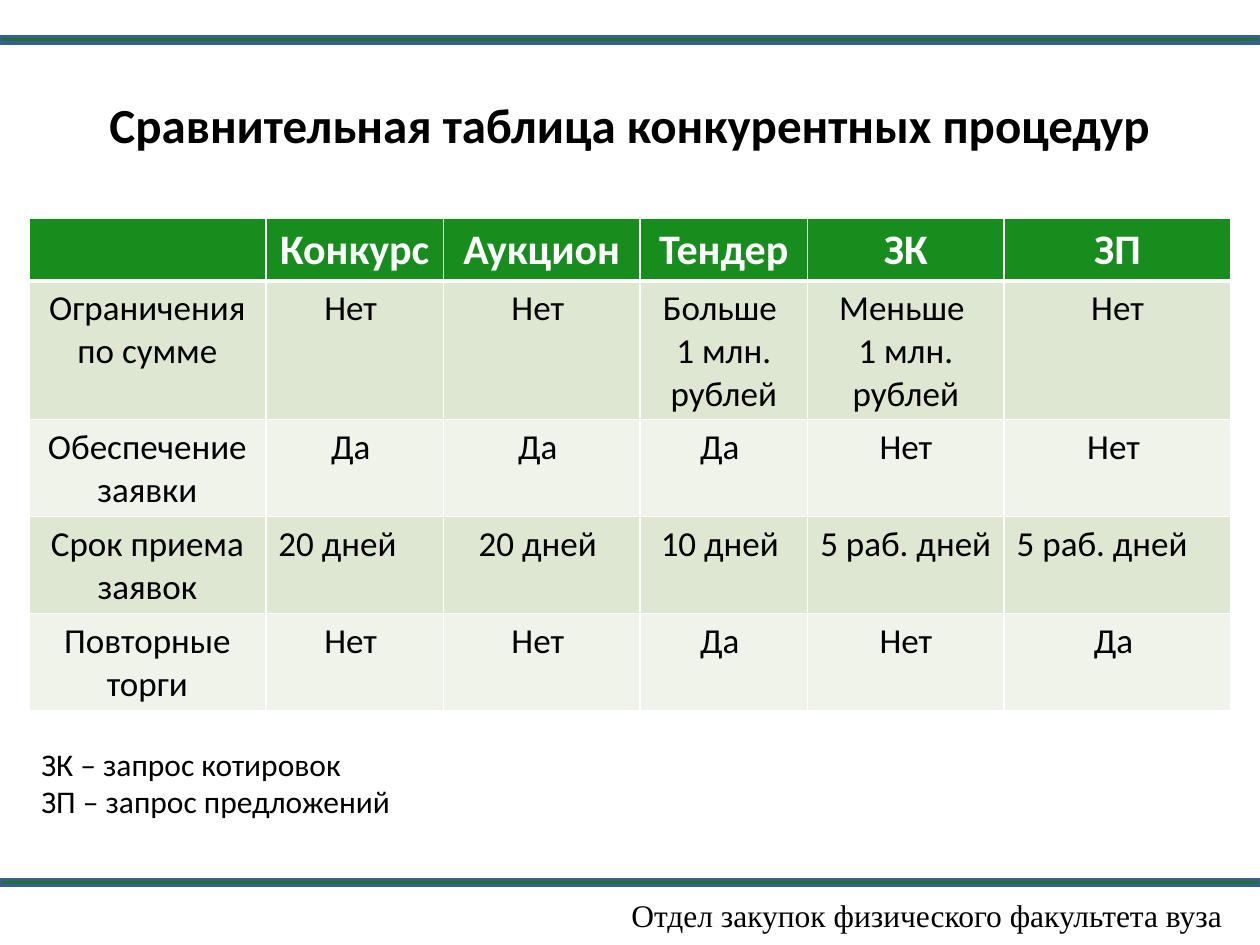
import pptx
import pptx.dml.color
import pptx.enum.shapes
import pptx.enum.text
import pptx.oxml
import pptx.oxml.ns
import pptx.util

Inches = pptx.util.Inches
Pt = pptx.util.Pt
RGBColor = pptx.dml.color.RGBColor
ALIGN = pptx.enum.text.PP_ALIGN

BLACK = RGBColor(0x00, 0x00, 0x00)
WHITE = RGBColor(0xFF, 0xFF, 0xFF)
BAR_GREEN = RGBColor(0x1B, 0x73, 0x38)
BAR_BLUE = RGBColor(0x3A, 0x5F, 0x8C)
HEADER_GREEN = RGBColor(0x17, 0x8D, 0x1D)
BANDS = [RGBColor(0xDE, 0xE7, 0xD1), RGBColor(0xEF, 0xF3, 0xEA)]

COLUMN_WIDTHS = [1.88, 1.41, 1.56, 1.33, 1.56, 1.8]
ROW_HEIGHTS = [0.5, 1.09, 0.77, 0.77, 0.77]
PROCEDURES = [
    ["", "Конкурс", "Аукцион", "Тендер", "ЗК", "ЗП"],
    ["Ограничения по сумме", "Нет ", "Нет ", "Больше \n1 млн. рублей",
     "Меньше \n1 млн. рублей", "Нет"],
    ["Обеспечение заявки", "Да ", "Да ", "Да ", "Нет", "Нет "],
    ["Срок приема заявок", "20 дней ", "20 дней ", "10 дней ",
     "5 раб. дней", "5 раб. дней "],
    ["Повторные торги", "Нет ", "Нет ", "Да ", "Нет", "Да "],
]
LEFT_ALIGNED_CELLS = {(3, 1), (3, 5)}


def write_text(text_frame, text, size, color=BLACK, bold=False,
               alignment=ALIGN.LEFT, font="Calibri"):
    text_frame.word_wrap = True
    for index, line in enumerate(text.split("\n")):
        paragraph = text_frame.add_paragraph() if index else text_frame.paragraphs[0]
        paragraph.alignment = alignment
        run = paragraph.add_run()
        run.text = line
        run.font.name = font
        run.font.size = Pt(size)
        run.font.bold = bold
        run.font.color.rgb = color


def add_text_box(slide, left, top, width, height, text, **style):
    box = slide.shapes.add_textbox(Inches(left), Inches(top), Inches(width), Inches(height))
    write_text(box.text_frame, text, 18, **style)


def add_bar(slide, top):
    bar = slide.shapes.add_shape(pptx.enum.shapes.MSO_SHAPE.RECTANGLE,
                                 Inches(0), Inches(top), Inches(10), Inches(0.05))
    bar.shadow.inherit = False
    bar.fill.solid()
    bar.fill.fore_color.rgb = BAR_GREEN
    bar.line.color.rgb = BAR_BLUE
    bar.line.width = Pt(2)


def set_borders(cell, top, bottom):
    properties = cell._tc.get_or_add_tcPr()
    widths = {"lnL": 1, "lnR": 1, "lnT": top, "lnB": bottom}
    for index, (side, width) in enumerate(widths.items()):
        properties.insert(index, pptx.oxml.parse_xml(
            f'<a:{side} {pptx.oxml.ns.nsdecls("a")} w="{Pt(width)}">'
            f'<a:solidFill><a:srgbClr val="{WHITE}"/></a:solidFill></a:{side}>'))


def format_cell(cell, text, row, column):
    is_header = row == 0
    cell.fill.solid()
    cell.fill.fore_color.rgb = HEADER_GREEN if is_header else BANDS[(row - 1) % 2]
    set_borders(cell, top=3 if row == 1 else 1, bottom=3 if is_header else 1)
    if text:
        write_text(cell.text_frame, text, 24 if is_header else 20,
                   color=WHITE if is_header else BLACK, bold=is_header,
                   alignment=ALIGN.LEFT if (row, column) in LEFT_ALIGNED_CELLS
                   else ALIGN.CENTER)


def add_procedure_table(slide):
    table = slide.shapes.add_table(
        len(ROW_HEIGHTS), len(COLUMN_WIDTHS), Inches(0.23), Inches(1.73),
        Inches(sum(COLUMN_WIDTHS)), Inches(sum(ROW_HEIGHTS))).table
    for column, width in zip(table.columns, COLUMN_WIDTHS):
        column.width = Inches(width)
    for row, height in zip(table.rows, ROW_HEIGHTS):
        row.height = Inches(height)
    for row, texts in enumerate(PROCEDURES):
        for column, text in enumerate(texts):
            format_cell(table.cell(row, column), text, row, column)


def format_title(slide, text):
    title = slide.shapes.title
    title.left, title.top = Inches(0.23), Inches(0.7)
    title.width, title.height = Inches(9.53), Inches(0.57)
    write_text(title.text_frame, text, 28, bold=True, alignment=ALIGN.CENTER)


def main():
    presentation = pptx.Presentation()
    presentation.slide_width = Inches(10)
    presentation.slide_height = Inches(7.5)
    slide = presentation.slides.add_slide(presentation.slide_layouts[5])
    format_title(slide, "Сравнительная таблица конкурентных процедур")
    for top in (0.29, 6.98):
        add_bar(slide, top)
    add_text_box(slide, 4.8, 7.06, 5, 0.4, "Отдел закупок физического факультета вуза",
                 alignment=ALIGN.RIGHT, font="Times New Roman")
    add_procedure_table(slide)
    add_text_box(slide, 0.23, 5.86, 8.2, 0.71,
                 "ЗК – запрос котировок\nЗП – запрос предложений")
    presentation.save("out.pptx")


if __name__ == "__main__":
    main()
